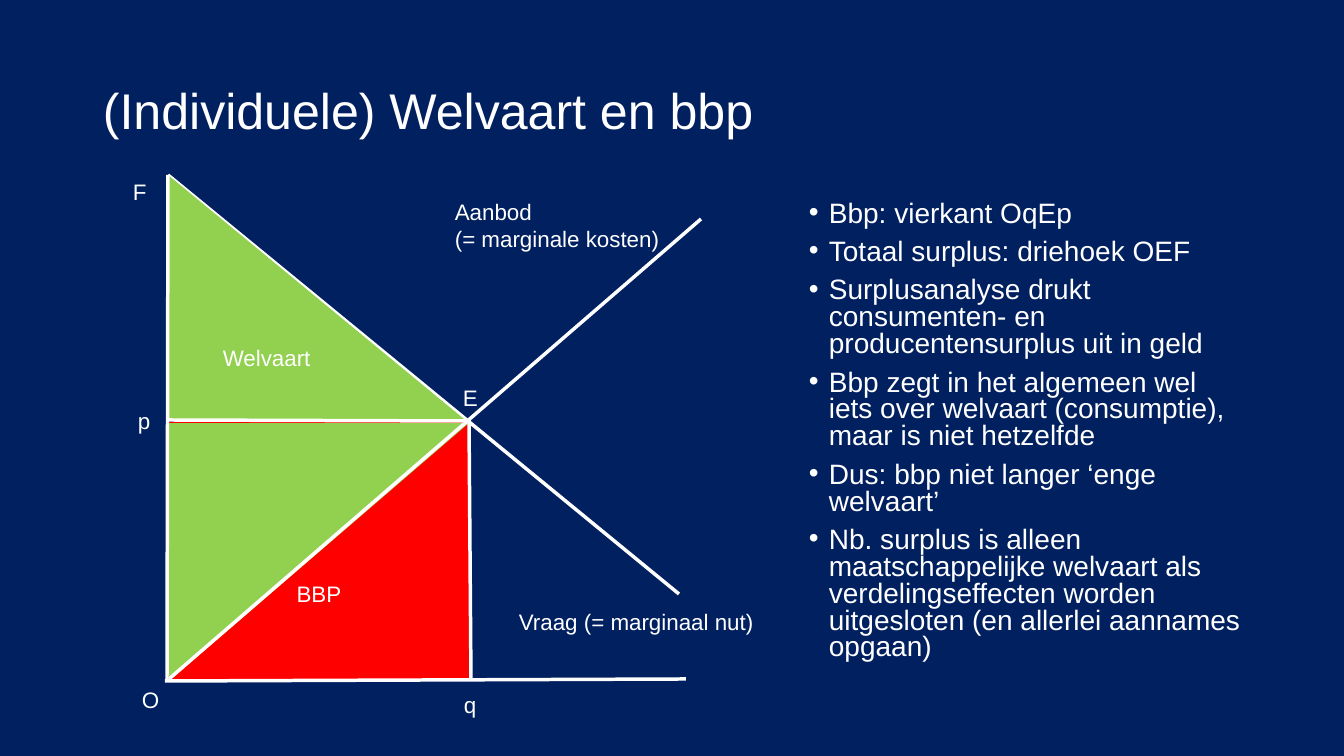
from lxml import etree
from pptx import Presentation
from pptx.dml.color import RGBColor
from pptx.enum.shapes import MSO_CONNECTOR, MSO_SHAPE
from pptx.enum.text import MSO_ANCHOR, PP_ALIGN
from pptx.oxml.ns import qn
from pptx.util import Pt

STRAIGHT = MSO_CONNECTOR.STRAIGHT
RECTANGLE, TRIANGLE = MSO_SHAPE.RECTANGLE, MSO_SHAPE.RIGHT_TRIANGLE
TOP, MIDDLE = MSO_ANCHOR.TOP, MSO_ANCHOR.MIDDLE
CENTER = PP_ALIGN.CENTER
WHITE, NAVY, RED, GREEN = "FFFFFF", "002060", "FF0000", "92D050"
FONT = "Arial"
LABEL_SIZE, TITLE_SIZE, BODY_SIZE = 16, 35.8, 20

# Content: boxes are (left, top, width, height) in px
TITLE = "(Individuele) Welvaart en bbp"
TITLE_BOX = (93, 40, 1159, 146)
BULLETS = [
    "Bbp: vierkant OqEp",
    "Totaal surplus: driehoek OEF",
    "Surplusanalyse drukt consumenten- en producentensurplus uit in geld",
    "Bbp zegt in het algemeen wel iets over welvaart (consumptie), maar is niet hetzelfde",
    "Dus: bbp niet langer ‘enge welvaart’",
    "Nb. surplus is alleen maatschappelijke welvaart als verdelingseffecten "
    "worden uitgesloten (en allerlei aannames opgaan)",
]
BULLETS_BOX = (799, 197, 452, 480)
BULLET_INDENT = 20
LABELS = [
    ("Vraag (= marginaal nut)", (509, 603, 258, 37)),
    ("Aanbod\n(= marginale kosten)", (445, 193, 227, 65)),
    ("p", (128, 402, 33, 37)),
    ("q", (454, 686, 33, 37)),
    ("O", (132, 681, 38, 37)),
    ("E", (453, 379, 35, 37)),
    ("F", (123, 173, 34, 37)),
]
# Kind, box, fill, rotation, text, extra top inset
AREAS = [
    (RECTANGLE, (168, 422, 302, 259), RED, 0, "BBP", 84),
    (TRIANGLE, (168, 175, 296, 244), GREEN, 0, "Welvaart", 0),
    (TRIANGLE, (190, 402, 258, 300), GREEN, 90, "", 0),
]
# Start and end points
DEMAND = (168, 175, 679, 594)
GRAPH_LINES = [
    (168, 175, 167, 681),  # price axis
    (686, 679, 165, 681),  # quantity axis
    (169, 679, 701, 219),  # supply
    (169, 420, 468, 421),  # price level
    (471, 679, 469, 419),  # quantity level
]


def px(length):
    return round(length * 914400 / 100.8)


def color(value):
    return RGBColor.from_string(value)


def format_text(frame, size):
    for para in frame.paragraphs:
        for span in para.runs:
            span.font.name = FONT
            span.font.size = Pt(size)
            span.font.color.rgb = color(WHITE)


def add_text(page, text, box, size, wrap=True, anchor=TOP):
    frame = page.shapes.add_textbox(*map(px, box)).text_frame
    frame.word_wrap = wrap
    frame.vertical_anchor = anchor
    frame.text = text
    format_text(frame, size)
    return frame


def add_line(page, points):
    line = page.shapes.add_connector(STRAIGHT, *map(px, points))
    line.line.color.rgb = color(WHITE)
    line.line.width = Pt(2.5)
    etree.SubElement(line._element.spPr, qn("a:effectLst"))


def add_area(page, kind, box, fill, rotation, text, inset):
    area = page.shapes.add_shape(kind, *map(px, box))
    area.shadow.inherit = False
    area.fill.solid()
    area.fill.fore_color.rgb = color(fill)
    area.line.fill.background()
    area.rotation = rotation
    if text:
        frame = area.text_frame
        frame.vertical_anchor = MIDDLE
        frame.margin_top += px(inset)
        frame.text = text
        frame.paragraphs[0].alignment = CENTER
        format_text(frame, LABEL_SIZE)


def add_bullets(page):
    frame = add_text(page, "\n".join(BULLETS), BULLETS_BOX, BODY_SIZE)
    for para in frame.paragraphs:
        para.line_spacing = 0.8
        para.space_before = Pt(8.1)
        props = para._p.get_or_add_pPr()
        props.set("marL", str(px(BULLET_INDENT)))
        props.set("indent", str(-px(BULLET_INDENT)))
        etree.SubElement(props, qn("a:buFont"), typeface=FONT)
        etree.SubElement(props, qn("a:buChar"), char="•")


def main():
    deck = Presentation()
    deck.slide_width, deck.slide_height = px(1344), px(756)
    page = deck.slides.add_slide(deck.slide_layouts[6])
    page.background.fill.solid()
    page.background.fill.fore_color.rgb = color(NAVY)

    # Graph: the areas cover part of the demand line
    add_line(page, DEMAND)
    for area in AREAS:
        add_area(page, *area)
    for points in GRAPH_LINES:
        add_line(page, points)
    for text, box in LABELS:
        add_text(page, text, box, LABEL_SIZE, wrap=False)

    # Title and explanation
    title = add_text(page, TITLE, TITLE_BOX, TITLE_SIZE, anchor=MIDDLE)
    title.paragraphs[0].line_spacing = 0.9
    add_bullets(page)
    deck.save("out.pptx")


if __name__ == "__main__":
    main()
